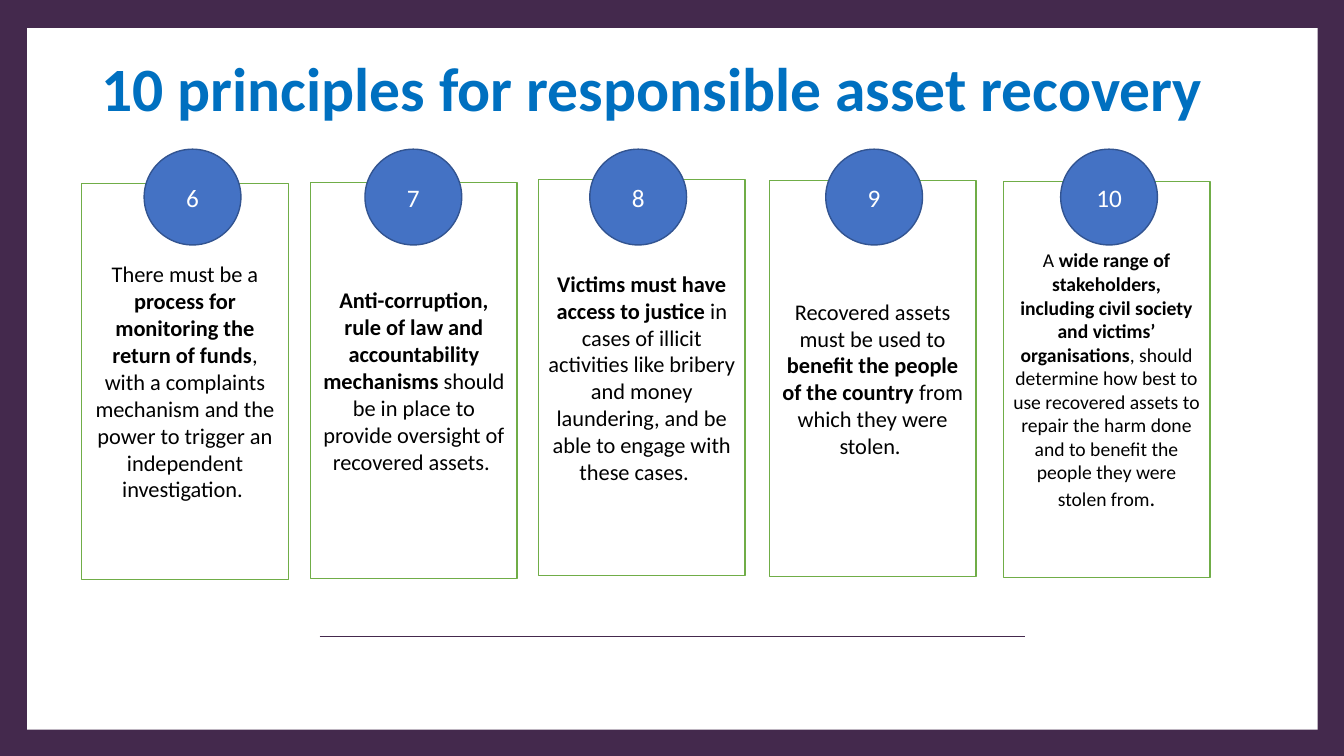
from lxml.etree import SubElement
from pptx import Presentation
from pptx.dml.color import RGBColor as RGB
from pptx.enum.shapes import MSO_CONNECTOR as LINK, MSO_SHAPE as SHAPE
from pptx.enum.text import MSO_ANCHOR as ANCHOR, MSO_AUTO_SIZE as FIT, PP_ALIGN as ALIGN
from pptx.oxml.ns import qn
from pptx.util import Inches, Pt

TITLE = "10 principles for responsible asset recovery"
CARDS = [
    (0.81, 1.82, 1.43, 16, [
        ("There must be a ", False),
        ("process for monitoring the return of funds", True),
        (", with a complaints mechanism and the power to trigger an independent investigation. ", False)]),
    (3.08, 1.81, 3.62, 16, [
        ("Anti-corruption, rule of law and accountability mechanisms ", True),
        ("should be in place to provide oversight of recovered assets. ", False)]),
    (5.34, 1.78, 5.85, 16, [
        ("Victims must have access to justice", True),
        (" in cases of illicit activities like bribery and money laundering, "
         "and be able to engage with these cases.   ", False)]),
    (7.63, 1.79, 8.19, 16, [
        ("Recovered assets must be used to ", False),
        ("benefit the people of the country ", True),
        ("from which they were stolen. ", False)]),
    (9.95, 1.8, 10.52, 14, [
        ("A ", False),
        ("wide range of stakeholders, including civil society and victims’ organisations", True),
        (", should determine how best to use recovered assets to repair the harm done "
         "and to benefit the people they were stolen from", False),
        (".", False, 16)]),
]
FIRST = 6
THEME = {
    "font": "Calibri", "frame": "44294D", "paper": "FFFFFF", "title": "0070C0",
    "edge": "70AD47", "text": "000000", "disc": "4472C4", "rim": "325491",
    "head": 44, "mark": 18,
}
CARD = (2.05, 3.93)
DISC = (0.96, 0.95)
DISC_TOP = 1.48


def tint(name):
    return RGB.from_string(THEME[name])


def apply(item, values):
    for name, value in values.items():
        setattr(item, name, value)


def draw(slide, kind, box, fill, edge=None):
    shape = slide.shapes.add_shape(kind, *map(Inches, box))
    shape.shadow.inherit = False
    shape.fill.solid()
    shape.fill.fore_color.rgb = tint(fill)
    if edge:
        shape.line.color.rgb = tint(edge)
        shape.line.width = Pt(1)
    else:
        shape.line.fill.background()
    return shape


def write(shape, runs, size, color, anchor=ANCHOR.MIDDLE, space=1.0):
    frame = shape.text_frame
    apply(frame, {"word_wrap": True, "auto_size": FIT.NONE, "vertical_anchor": anchor})
    para = frame.paragraphs[0]
    apply(para, {"alignment": ALIGN.CENTER, "line_spacing": space})
    for text, bold, *other in runs:
        run = para.add_run()
        run.text = text
        apply(run.font, {"name": THEME["font"], "bold": bold,
                         "size": Pt(other[0] if other else size)})
        run.font.color.rgb = tint(color)


def main():
    deck = Presentation()
    apply(deck, {"slide_width": Inches(13.33), "slide_height": Inches(7.5)})
    slide = deck.slides.add_slide(deck.slide_layouts[5])
    draw(slide, SHAPE.RECTANGLE, (0, 0, 13.33, 7.5), "frame")
    draw(slide, SHAPE.RECTANGLE, (0.27, 0.28, 12.8, 6.96), "paper")

    rule = slide.shapes.add_connector(
        LINK.STRAIGHT, *map(Inches, (3.17, 6.31, 10.17, 6.31)))
    rule.line.color.rgb = tint("frame")
    rule.line.width = Pt(0.5)
    SubElement(rule.element.spPr, qn("a:effectLst"))

    title = slide.shapes.title
    apply(title, {"left": Inches(0.49), "top": Inches(0.43),
                  "width": Inches(11.97), "height": Inches(0.86)})
    write(title, [(TITLE, True)], THEME["head"], "title", ANCHOR.BOTTOM, 0.9)
    slide.shapes.element.append(title.element)

    for left, top, _, size, runs in CARDS:
        card = draw(slide, SHAPE.RECTANGLE, (left, top, *CARD), "paper", "edge")
        write(card, runs, size, "text")
    for mark, (_, _, left, _, _) in enumerate(CARDS, FIRST):
        disc = draw(slide, SHAPE.OVAL, (left, DISC_TOP, *DISC), "disc", "rim")
        write(disc, [(str(mark), False)], THEME["mark"], "paper")
    deck.save("out.pptx")


if __name__ == "__main__":
    main()
